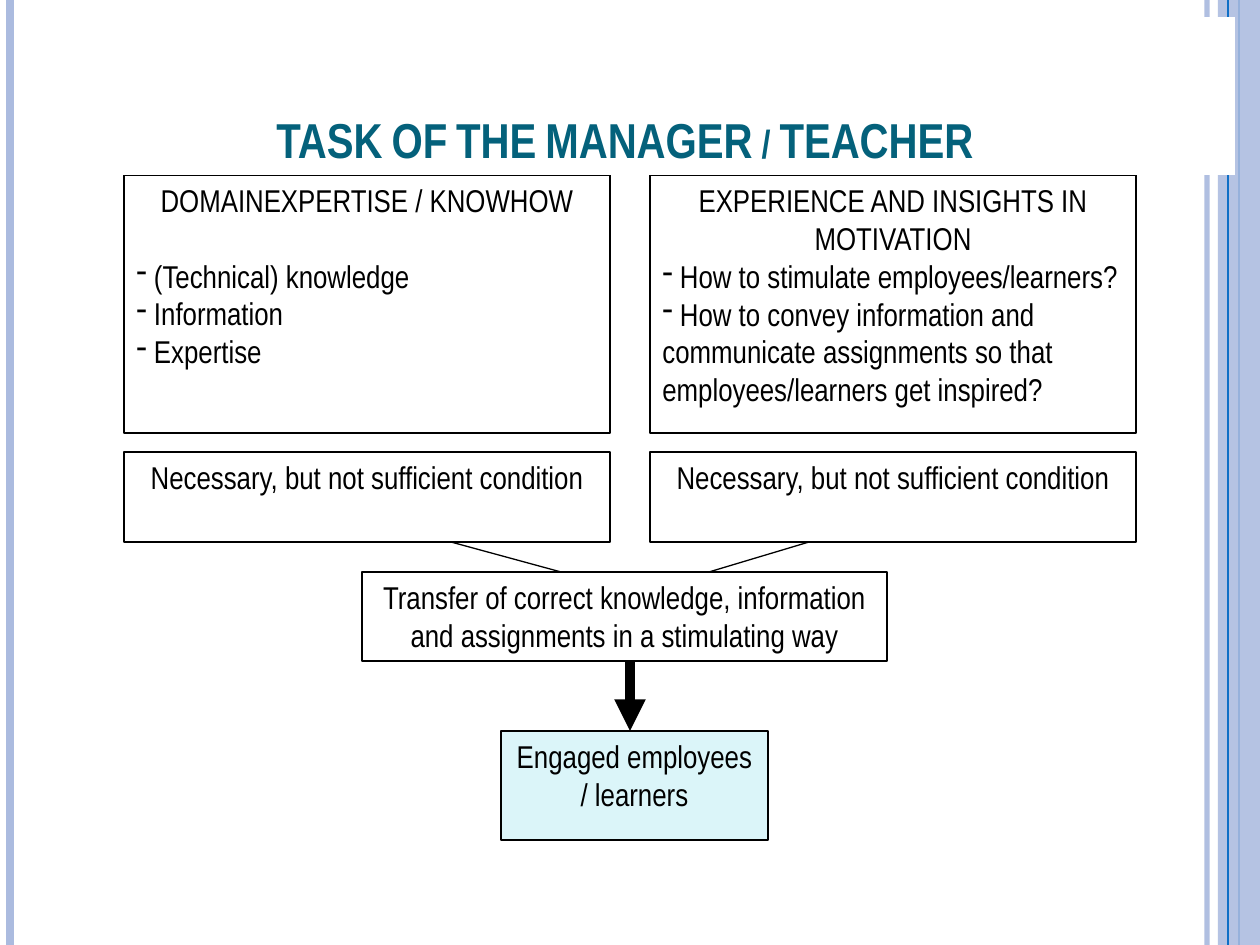
from lxml import etree
from pptx import Presentation
from pptx.dml.color import RGBColor
from pptx.enum.shapes import MSO_CONNECTOR, MSO_SHAPE
from pptx.enum.text import MSO_ANCHOR, PP_ALIGN
from pptx.oxml.ns import qn
from pptx.util import Pt

PX = 914400 / 126
WIDTH, HEIGHT = 1260, 945
FONT = "Arial Narrow"
BLACK = RGBColor(0x00, 0x00, 0x00)
WHITE = RGBColor(0xFF, 0xFF, 0xFF)
PALE_CYAN = RGBColor(0xDB, 0xF5, 0xF9)
TEAL = RGBColor(0x04, 0x61, 0x7B)
LAVENDER = RGBColor(0xAB, 0xBB, 0xDF)
BLUE = RGBColor(0x0F, 0x6F, 0xC6)
RECTANGLE = MSO_SHAPE.RECTANGLE
STRAIGHT = MSO_CONNECTOR.STRAIGHT
CENTER, LEFT = PP_ALIGN.CENTER, PP_ALIGN.LEFT
TOP, BOTTOM = MSO_ANCHOR.TOP, MSO_ANCHOR.BOTTOM

deck = Presentation()
deck.slide_width, deck.slide_height = round(WIDTH * PX), round(HEIGHT * PX)
page = deck.slides.add_slide(deck.slide_layouts[5])


def add_line(x1, y1, x2, y2, color, width):
    ends = [round(value * PX) for value in (x1, y1, x2, y2)]
    line = page.shapes.add_connector(STRAIGHT, *ends)
    line.line.color.rgb = color
    line.line.width = Pt(width)
    etree.SubElement(line._element.spPr, qn("a:effectLst"))
    return line


def add_box(x, y, width, height, fill, heading="", items=(), gap=0):
    """Add a rectangle with a centred heading, and dashed items below a gap in points."""
    frame = [round(value * PX) for value in (x, y, width, height)]
    box = page.shapes.add_shape(RECTANGLE, *frame)
    box.shadow.inherit = False
    box.fill.solid()
    box.fill.fore_color.rgb = fill
    box.line.color.rgb = BLACK
    box.line.width = Pt(0.75)
    text = box.text_frame
    text.word_wrap = True
    text.vertical_anchor = TOP
    text.text = "\n".join([heading, *items])
    for index, para in enumerate(text.paragraphs):
        para.alignment = LEFT if index else CENTER
        if index == 1:
            para.space_before = Pt(gap)
        if index:
            bullet = etree.SubElement(para._p.get_or_add_pPr(), qn("a:buChar"))
            bullet.set("char", "-")
        para.font.size = Pt(18)
        for span in para.runs:
            span.font.name = FONT
            span.font.size = Pt(18)
            span.font.color.rgb = BLACK
    return box


# Vertical stripes at the slide edges
edge = add_line(1207, 0, 1207, HEIGHT, LAVENDER, 3)
add_line(10, 0, 10, HEIGHT, LAVENDER, 4.5)
add_line(1239, 0, 1239, HEIGHT, BLUE, 1.5)
band = add_box(1218, 0, 42, HEIGHT, LAVENDER)
band.line.fill.background()
add_line(1228, 0, 1228, HEIGHT, BLUE, 0.75)
for stripe, opacity in ((edge, 93), (band, 87)):
    color = next(stripe._element.spPr.iter(qn("a:srgbClr")))
    etree.SubElement(color, qn("a:alpha")).set("val", str(opacity * 1000))

# Two columns of requirements
columns = [
    (124, "DOMAINEXPERTISE / KNOWHOW",
     [" (Technical) knowledge", " Information", " Expertise"], 21.5),
    (650, "EXPERIENCE AND INSIGHTS IN MOTIVATION",
     [" How to stimulate employees/learners?",
      " How to convey information and communicate assignments"
      " so that employees/learners get inspired?"], 0),
]
for left, heading, items, gap in columns:
    add_box(left, 175, 486, 258, WHITE, heading, items, gap)
    add_box(left, 452, 486, 90, WHITE, "Necessary, but not sufficient condition")

# Joint result
add_box(362, 572, 525, 89, WHITE,
        "Transfer of correct knowledge, information and assignments in a stimulating way")
add_box(501, 731, 267, 109, PALE_CYAN, "Engaged employees / learners")
add_line(451, 542, 561, 572, BLACK, 0.75)
add_line(809, 542, 709, 572, BLACK, 0.75)
arrow = add_line(630, 661, 630, 731, BLACK, 6)
etree.SubElement(arrow.line._get_or_add_ln(), qn("a:tailEnd")).set("type", "triangle")

# The title's white panel lies over the stripes
title = page.shapes.title
title.left, title.top = round(15 * PX), round(17 * PX)
title.width, title.height = round(1220 * PX), round(158 * PX)
title.fill.solid()
title.fill.fore_color.rgb = WHITE
title.text_frame.text = "TASK OF THE MANAGER / TEACHER"
title.text_frame.word_wrap = True
title.text_frame.vertical_anchor = BOTTOM
para = title.text_frame.paragraphs[0]
para.alignment = CENTER
span = para.runs[0]
span.font.name = FONT
span.font.size = Pt(28)
span.font.bold = True
span.font.color.rgb = TEAL
span._r.get_or_add_rPr().set("cap", "small")
page.shapes._spTree.append(title._element)

deck.save("out.pptx")
